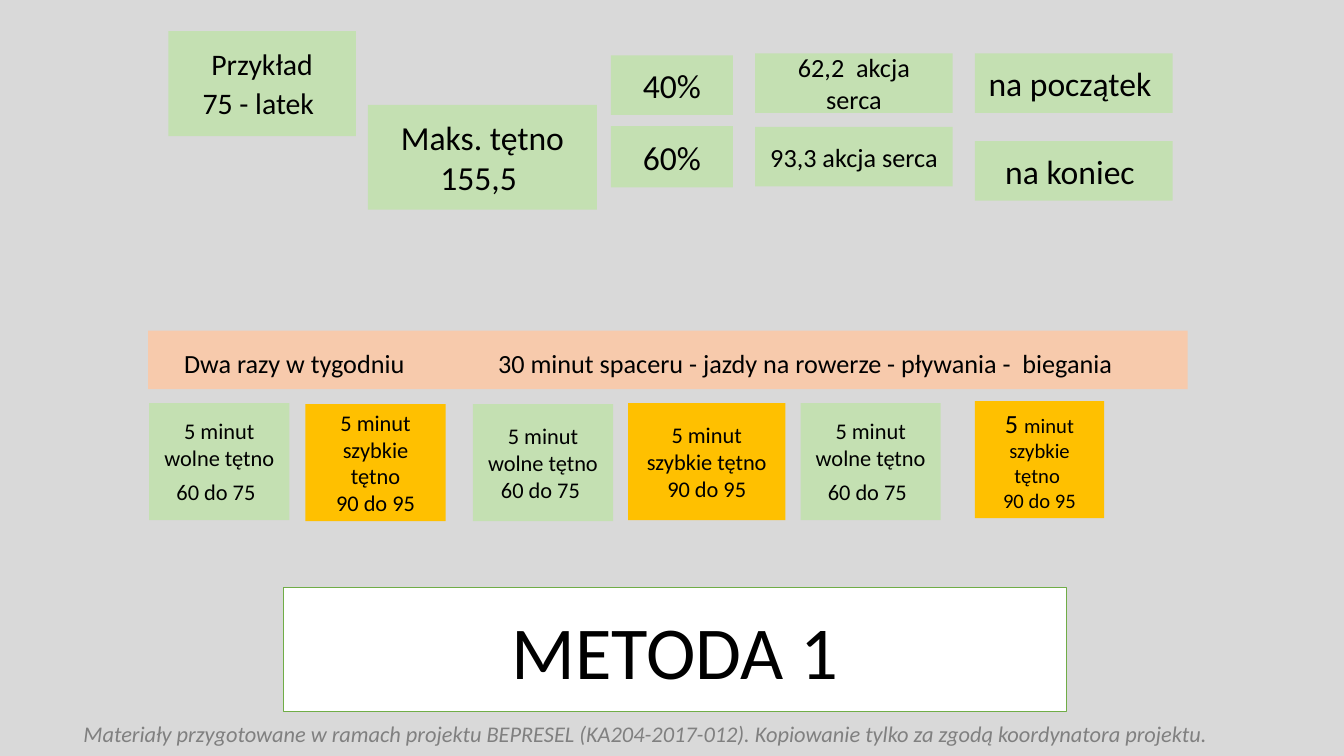
"""Build the METODA 1 heart-rate training slide."""
from lxml import etree
from pptx import Presentation
from pptx.dml.color import RGBColor
from pptx.enum import shapes, text
from pptx.oxml.ns import qn
from pptx.util import Inches, Pt

GREY = RGBColor(0xD9, 0xD9, 0xD9)
GREEN = RGBColor(0xC4, 0xE0, 0xB2)
AMBER = RGBColor(0xFF, 0xC0, 0x00)
PEACH = RGBColor(0xF7, 0xCA, 0xAC)
WHITE = RGBColor(0xFF, 0xFF, 0xFF)
BLACK = RGBColor(0, 0, 0)
BORDER = RGBColor(0x70, 0xAD, 0x47)
FOOTER = RGBColor(0x80, 0x80, 0x80)


def write(tf, paragraphs, color=BLACK, align=text.PP_ALIGN.CENTER, italic=False):
    tf.word_wrap = True
    for i, runs in enumerate(paragraphs):
        p = tf.add_paragraph() if i else tf.paragraphs[0]
        p.alignment = align
        for content, size in runs:
            r = p.add_run()
            r.text = content
            r.font.color.rgb = color
            for name, value in dict(name="Calibri", size=Pt(size), italic=italic).items():
                setattr(r.font, name, value)


def box(left, top, width, height, fill, paragraphs, **options):
    sp = s.shapes.add_shape(shapes.MSO_SHAPE.RECTANGLE, Inches(left), Inches(top),
                            Inches(width), Inches(height))
    sp.shadow.inherit = False
    sp.fill.solid()
    sp.fill.fore_color.rgb = fill
    sp.line.fill.background()
    tf = sp.text_frame
    frame = dict(margin_left=Inches(0.13), margin_right=Inches(0.13),
                 margin_top=Inches(0.07), margin_bottom=Inches(0.07),
                 vertical_anchor=text.MSO_ANCHOR.MIDDLE)
    for name, value in frame.items():
        setattr(tf, name, value)
    write(tf, paragraphs, **options)
    return sp


prs = Presentation()
prs.slide_width, prs.slide_height = Inches(13.33), Inches(7.5)
s = prs.slides.add_slide(prs.slide_layouts[6])
s.background.fill.solid()
s.background.fill.fore_color.rgb = GREY

banner = box(1.47, 3.28, 10.31, 0.58, PEACH,
             [[(" ", 24), ("Dwa razy w tygodniu\t30 minut spaceru - jazdy na rowerze"
                           " - pływania -  biegania", 18.7)]],
             align=text.PP_ALIGN.LEFT)
banner.text_frame.margin_left = Inches(0.28)
pPr = banner.text_frame.paragraphs[0]._p.get_or_add_pPr()
tabs = etree.SubElement(pPr, qn("a:tabLst"))
etree.SubElement(tabs, qn("a:tab"), pos=str(Inches(3.19)), algn="l")

box(1.67, 0.31, 1.86, 1.04, GREEN,
    [[("Przykład", 21.3)], [("75 - latek", 21.3), (" ", 24)]])

pulse_boxes = [
    (3.65, 1.04, 2.27, 1.04, "Maks. tętno 155,5 ", 24),
    (6.06, 0.55, 1.21, 0.59, "40%", 24),
    (6.06, 1.25, 1.21, 0.61, "60%", 24),
    (7.49, 0.53, 1.96, 0.59, "62,2  akcja serca", 18.7),
    (7.49, 1.26, 1.96, 0.59, "93,3 akcja serca ", 18.7),
    (9.67, 0.53, 1.96, 0.59, "na początek ", 24),
    (9.67, 1.4, 1.96, 0.59, "na koniec ", 24),
]
for left, top, width, height, label, size in pulse_boxes:
    box(left, top, width, height, GREEN, [[(label, size)]])

five = [("5 minut", 16)]
slow = [five, [("wolne tętno", 16)], [("60 do 75", 16), (" ", 21.3)]]
slow_tight = slow[:2] + [[("60 do 75 ", 16)]]
fast = [five, [("szybkie tętno", 16)], [("90 do 95", 16)]]
fast_last = [[("5 ", 18.7), ("minut", 14.7)], [("szybkie tętno ", 14.7)],
             [("90 do 95", 14.7)]]
intervals = [
    (1.48, 4, 1.39, GREEN, slow),
    (3.03, 4.01, 1.39, AMBER, fast),
    (4.69, 4.01, 1.39, GREEN, slow_tight),
    (6.23, 4, 1.56, AMBER, fast),
    (7.94, 4, 1.39, GREEN, slow),
    (9.67, 3.98, 1.28, AMBER, fast_last),
]
for left, top, width, fill, paragraphs in intervals:
    box(left, top, width, 1.16, fill, paragraphs)

title = box(2.81, 5.83, 7.77, 1.23, WHITE, [[("METODA 1", 53.3)]])
title.line.color.rgb = BORDER
title.line.width = Pt(1)

footer = s.shapes.add_textbox(Inches(0.73), Inches(7.1), Inches(12.5), Inches(0.37))
write(footer.text_frame,
      [[("Materiały przygotowane w ramach projektu BEPRESEL (KA204-2017-012). "
         "Kopiowanie tylko za zgodą koordynatora projektu.", 16)]],
      color=FOOTER, align=text.PP_ALIGN.LEFT, italic=True)

prs.save("out.pptx")
